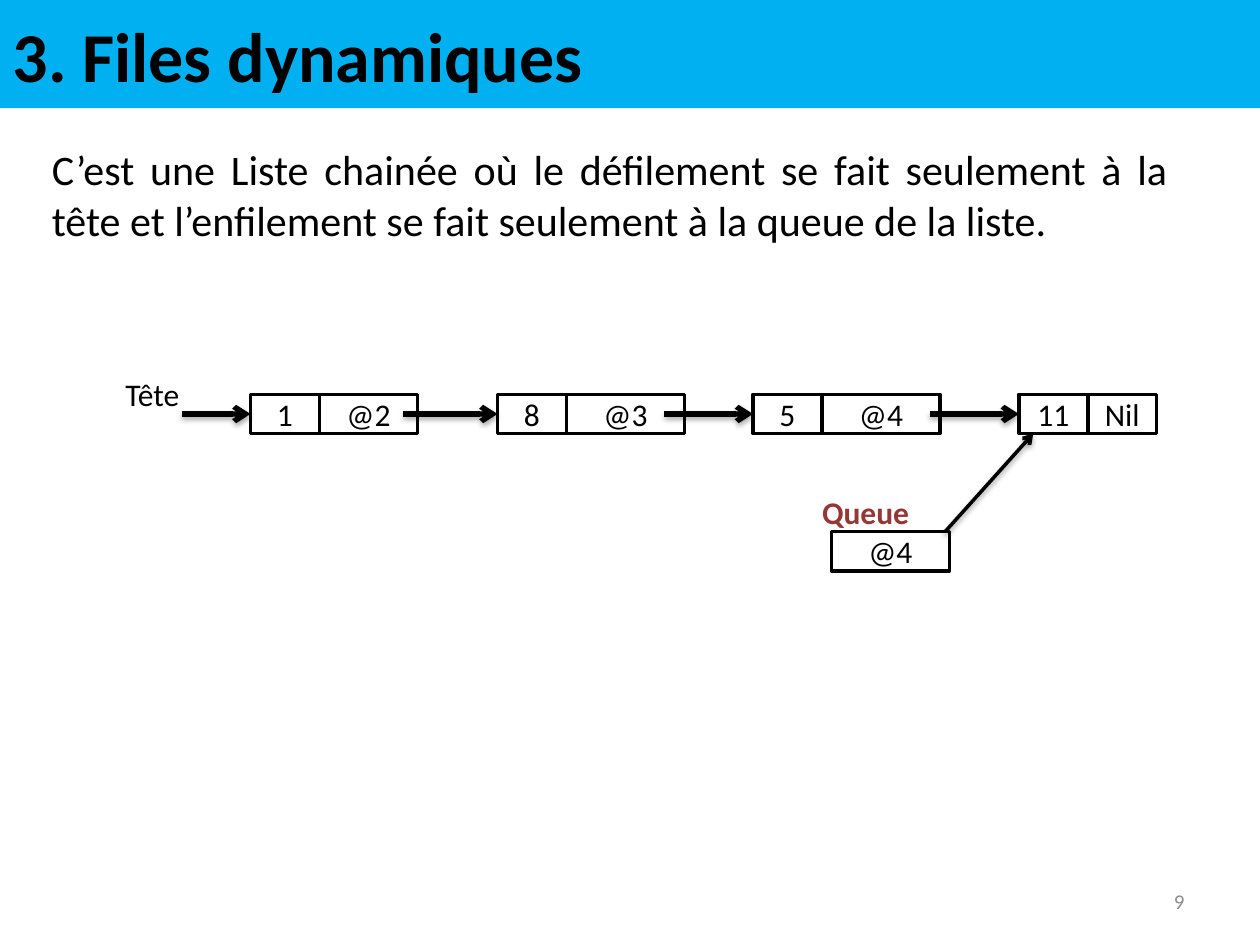
from lxml.etree import SubElement
from pptx import Presentation
from pptx.dml.color import RGBColor
from pptx.enum.shapes import MSO_CONNECTOR, MSO_SHAPE
from pptx.enum.text import MSO_ANCHOR, MSO_AUTO_SIZE, PP_ALIGN
from pptx.oxml import parse_xml
from pptx.oxml.ns import nsdecls, qn
from pptx.util import Cm, Pt


def rgb(value):
    return RGBColor.from_string(value)


def write(sp, text, size, align, color="000000", bold=False, anchor=MSO_ANCHOR.MIDDLE):
    tf = sp.text_frame
    tf.word_wrap = True
    tf.auto_size = MSO_AUTO_SIZE.NONE
    tf.vertical_anchor = anchor
    p = tf.paragraphs[0]
    p.alignment = align
    r = p.add_run()
    r.text = text
    r.font.name = "Calibri"
    r.font.size = Pt(size)
    r.font.bold = bold
    r.font.color.rgb = rgb(color)
    return p


prs = Presentation()
prs.slide_width = Cm(25.4)
prs.slide_height = Cm(19.05)
s = prs.slides.add_slide(prs.slide_layouts[1])

title = s.shapes.title
title.left, title.top, title.width, title.height = Cm(0), Cm(0), Cm(25.4), Cm(2.18)
title.fill.solid()
title.fill.fore_color.rgb = rgb("00B0F0")
p = write(title, "3. Files dynamiques", 40, PP_ALIGN.LEFT, bold=True)
pPr = p._p.get_or_add_pPr()
pPr.set("marL", str(Cm(2.06)))
pPr.set("indent", str(-Cm(2.06)))

body = s.placeholders[1]
body.left, body.top, body.width, body.height = Cm(0.79), Cm(2.77), Cm(23.01), Cm(15.09)
p = write(
    body,
    "C’est une Liste chainée où le défilement se fait seulement à la tête "
    "et l’enfilement se fait seulement à la queue de la liste.",
    24, PP_ALIGN.JUSTIFY, anchor=MSO_ANCHOR.TOP,
)
pPr = p._p.get_or_add_pPr()
pPr.set("marL", "0")
pPr.set("indent", "0")
SubElement(pPr, qn("a:buNone"))

number = s.shapes.add_textbox(Cm(18.21), Cm(17.65), Cm(5.92), Cm(1.02))
write(number, "9", 12, PP_ALIGN.RIGHT, "8C8C8C")

row, height, value_w = 7.95, 0.79, 1.39
nodes = [
    (5.05, "1", "@2", 1.98),
    (10.03, "8", "@3", 2.38),
    (15.18, "5", "@4", 2.38),
    (20.54, "11", "Nil", 1.39),
]
cells = [(16.76, 10.72, 2.38, "@4")]
for left, value, address, address_w in nodes:
    cells.append((left, row, value_w, value))
    cells.append((left + value_w, row, address_w, address))

for left, top, width, text in cells:
    sp = s.shapes.add_shape(MSO_SHAPE.RECTANGLE, Cm(left), Cm(top), Cm(width), Cm(height))
    sp.shadow.inherit = False
    sp.fill.solid()
    sp.fill.fore_color.rgb = rgb("FFFFFF")
    sp.line.color.rgb = rgb("000000")
    sp.line.width = Pt(2)
    tf = sp.text_frame
    tf.margin_left = tf.margin_right = tf.margin_top = tf.margin_bottom = 0
    write(sp, text, 18, PP_ALIGN.CENTER)

labels = [
    (2.08, 7.54, 1.98, "Tête", "000000", False),
    (15.57, 9.93, 3.76, "Queue", "953735", True),
]
for left, top, width, text, color, bold in labels:
    sp = s.shapes.add_textbox(Cm(left), Cm(top), Cm(width), Cm(height))
    tf = sp.text_frame
    tf.margin_left = tf.margin_right = tf.margin_top = tf.margin_bottom = 0
    write(sp, text, 18, PP_ALIGN.CENTER, color, bold)

middle = row + height / 2
starts = [3.66, 8.13, 13.39, 18.75]
arrows = [(x, middle, node[0], middle, 3) for x, node in zip(starts, nodes)]
arrows.append((19.05, 10.72, 20.83, row + height, 2))
for x1, y1, x2, y2, width in arrows:
    line = s.shapes.add_connector(MSO_CONNECTOR.STRAIGHT, Cm(x1), Cm(y1), Cm(x2), Cm(y2))
    line.line.color.rgb = rgb("000000")
    line.line.width = Pt(width)
    SubElement(line.line._get_or_add_ln(), qn("a:tailEnd"), type="arrow")
    line._element.spPr.append(parse_xml(
        f'<a:effectLst {nsdecls("a")}>'
        '<a:outerShdw blurRad="40000" dist="23000" dir="5400000" rotWithShape="0">'
        '<a:srgbClr val="000000"><a:alpha val="35000"/></a:srgbClr>'
        '</a:outerShdw></a:effectLst>'
    ))

prs.save("out.pptx")
